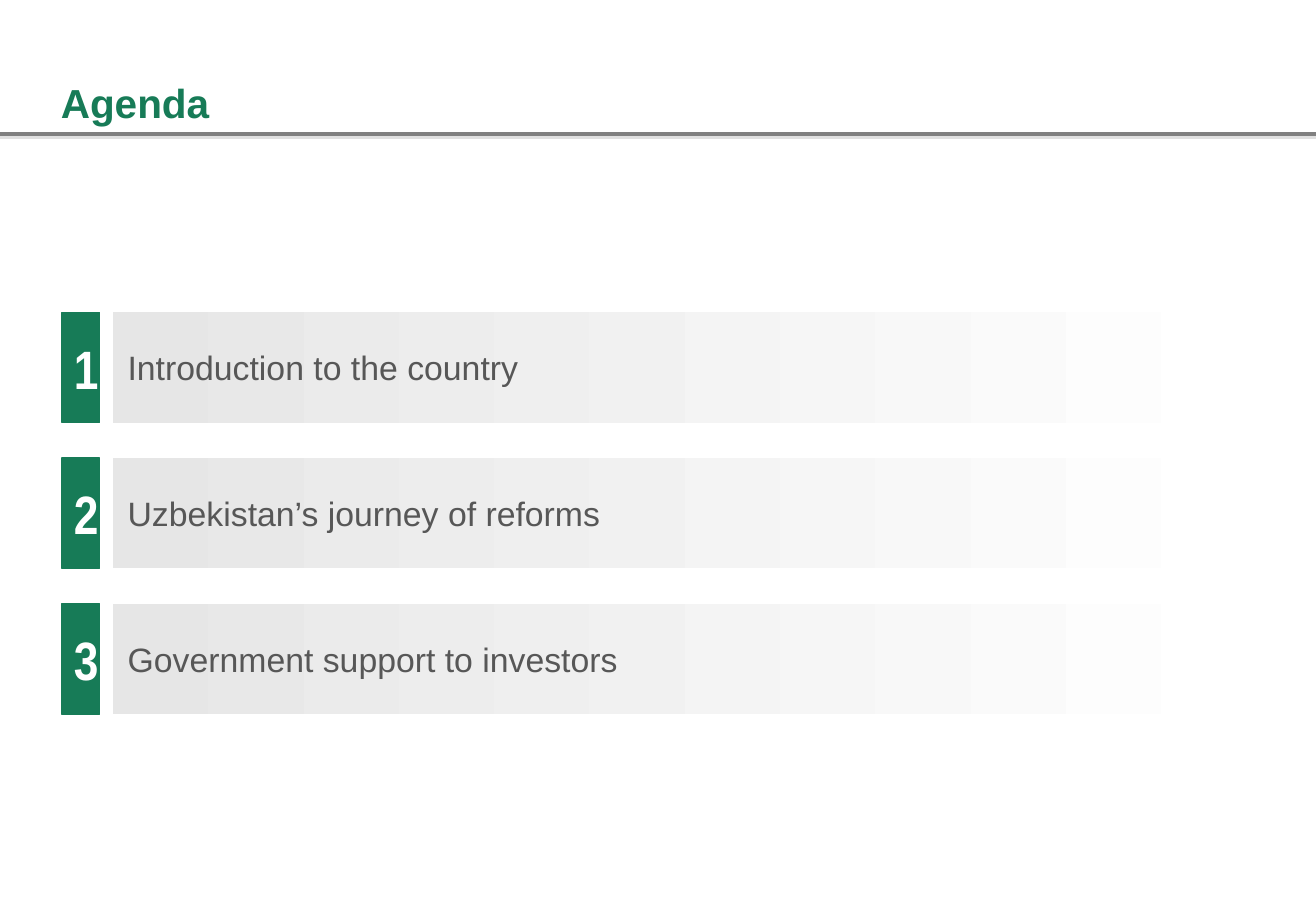
import pptx
import pptx.util
import pptx.dml.color
import pptx.enum.shapes
import pptx.enum.text
import pptx.oxml
import pptx.oxml.ns

Inches, Pt = pptx.util.Inches, pptx.util.Pt
RGB = pptx.dml.color.RGBColor.from_string
ALIGN = pptx.enum.text.PP_ALIGN
ANCHOR = pptx.enum.text.MSO_ANCHOR
RECTANGLE = pptx.enum.shapes.MSO_SHAPE.RECTANGLE

COLORS = {"green": "177B57", "text": "575757", "white": "FFFFFF",
          "bar": "E6E6E6", "rule": "808080", "rule_shadow": "E0E0E0"}
TOPICS = ["Introduction to the country",
          "Uzbekistan’s journey of reforms",
          "Government support to investors"]

# Agenda grid in inches
ROW_TOP, ROW_STEP, ROW_HEIGHT = 2.57, 1.2, 0.91
NUMBER_LEFT, NUMBER_WIDTH = 0.51, 0.31
TOPIC_LEFT, TOPIC_WIDTH = 0.93, 9.41


def write(box, text, insets, anchor, align, color, **font_format):
    frame = box.text_frame
    frame.word_wrap = True
    frame.auto_size = pptx.enum.text.MSO_AUTO_SIZE.NONE
    frame.vertical_anchor = anchor
    for side, inset in zip(("left", "top", "right", "bottom"), insets):
        setattr(frame, f"margin_{side}", Inches(inset))
    frame.text = text
    paragraph = frame.paragraphs[0]
    paragraph.alignment = align
    font = paragraph.runs[0].font
    font.color.rgb = RGB(COLORS[color])
    for attribute, value in font_format.items():
        setattr(font, attribute, value)


def add_bar(left, top, width):
    bar = slide.shapes.add_shape(RECTANGLE, Inches(left), Inches(top),
                                 Inches(width), Inches(ROW_HEIGHT))
    bar.shadow.inherit = False
    return bar


deck = pptx.Presentation()
deck.slide_width, deck.slide_height = Inches(10.83), Inches(7.5)
slide = deck.slides.add_slide(deck.slide_layouts[5])

# Rule under the title, with a hard shadow
rule = slide.shapes.add_connector(
    pptx.enum.shapes.MSO_CONNECTOR.STRAIGHT,
    deck.slide_width, Inches(1.1), 0, Inches(1.1))
rule.line.color.rgb = RGB(COLORS["rule"])
rule.line.width = Pt(2.25)
rule._element.spPr.append(pptx.oxml.parse_xml(
    f'<a:effectLst {pptx.oxml.ns.nsdecls("a")}>'
    f'<a:outerShdw dist="{Pt(2)}" dir="5400000" algn="ctr" rotWithShape="0">'
    f'<a:srgbClr val="{COLORS["rule_shadow"]}"/></a:outerShdw></a:effectLst>'))

# Title
title = slide.shapes.title
title.left, title.top = Inches(0.5), Inches(0.18)
title.width, title.height = Inches(9.83), Inches(0.91)
write(title, "Agenda", (0, 0.05, 0, 0.05), ANCHOR.BOTTOM, ALIGN.LEFT,
      "green", name="Arial", size=Pt(24), bold=True)

# Agenda rows: fading topic bar and green number
for row, topic in enumerate(TOPICS):
    top = ROW_TOP + row * ROW_STEP

    topic_bar = add_bar(TOPIC_LEFT, top, TOPIC_WIDTH)
    topic_bar.line.fill.background()
    topic_bar.fill.gradient()
    topic_bar.fill.gradient_angle = 0
    for stop, position, color in zip(topic_bar.fill.gradient_stops,
                                     (0, 1), ("bar", "white")):
        stop.position = position
        stop.color.rgb = RGB(COLORS[color])
    write(topic_bar, topic, (0.12, 0, 0.08, 0), ANCHOR.MIDDLE, ALIGN.LEFT,
          "text", name="Arial", size=Pt(20))

    number = add_bar(NUMBER_LEFT, top, NUMBER_WIDTH)
    number.fill.solid()
    number.fill.fore_color.rgb = RGB(COLORS["green"])
    number.line.color.rgb = RGB(COLORS["green"])
    number.line.width = Pt(0.75)
    write(number, str(row + 1), (0.1,) * 4, ANCHOR.MIDDLE, ALIGN.CENTER,
          "white", name="Arial Narrow", size=Pt(32), bold=True)

deck.save("out.pptx")
